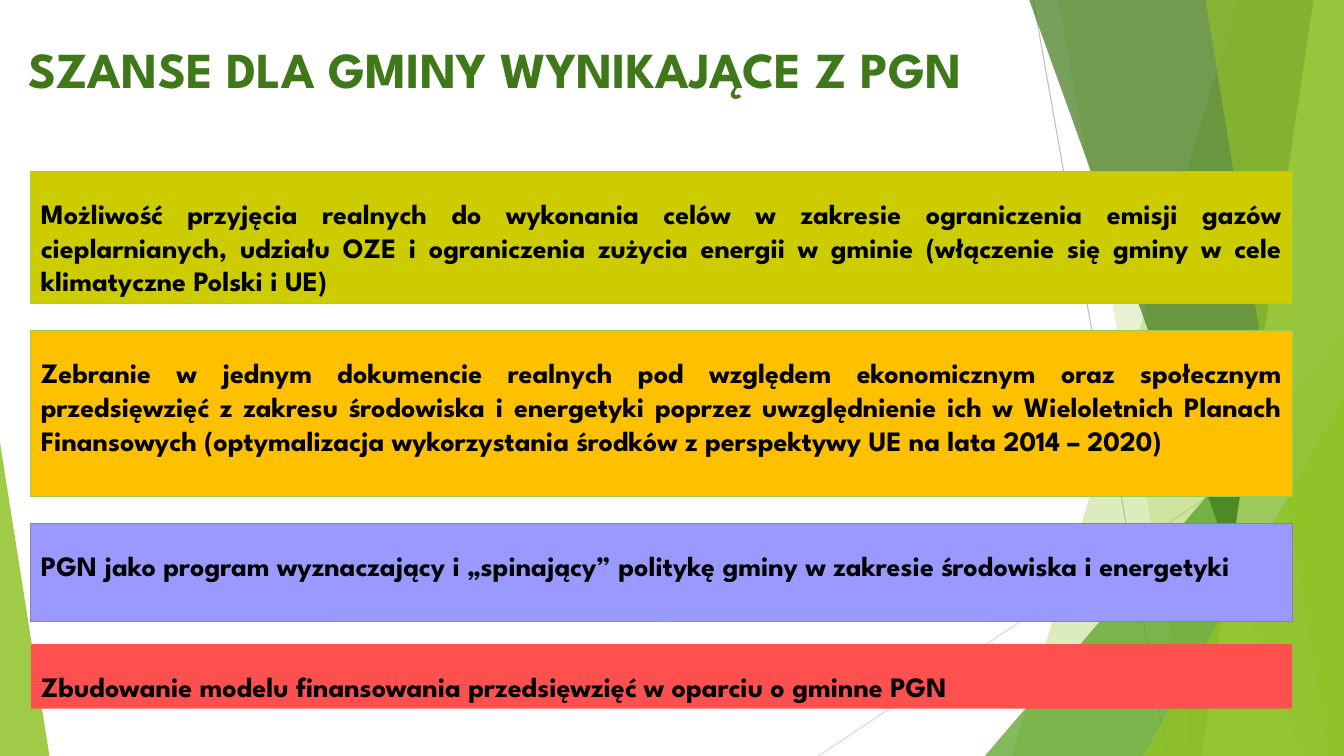
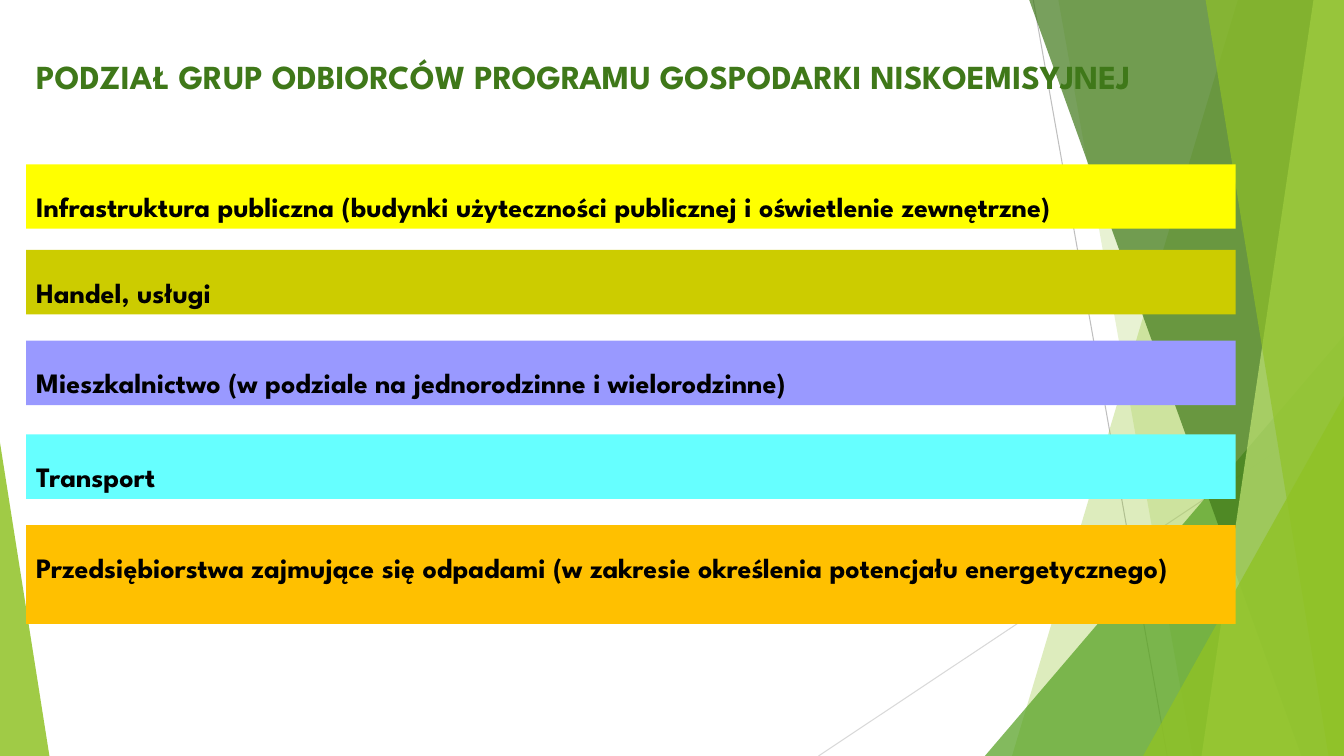
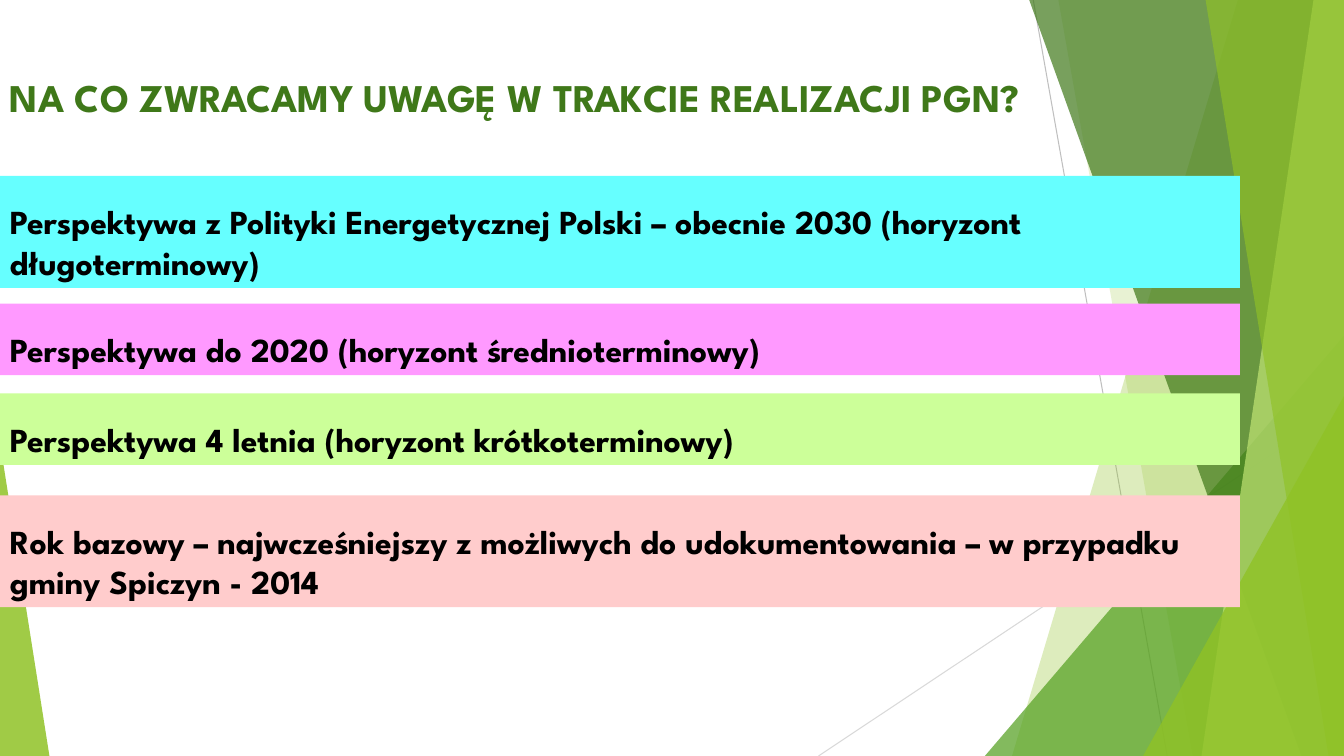
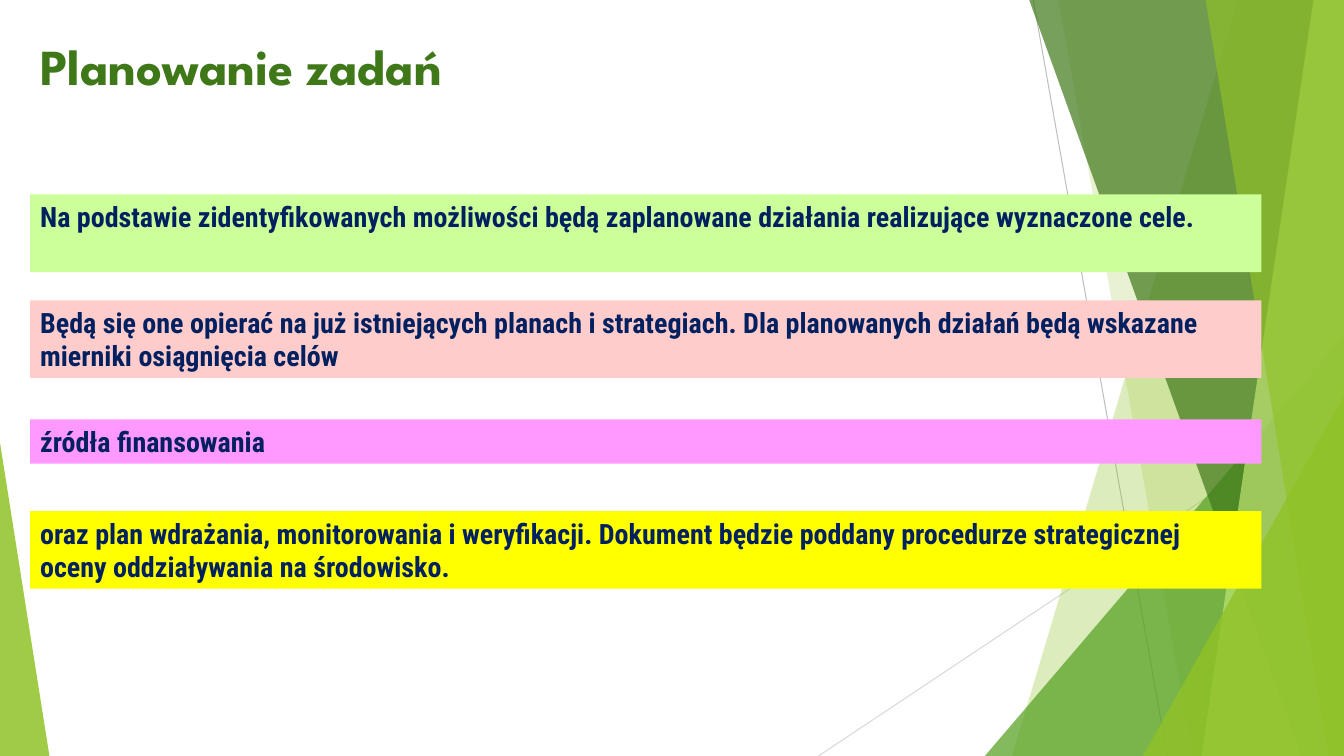
from dataclasses import dataclass

from lxml import etree
from pptx import Presentation
from pptx import util as u
from pptx.dml.color import RGBColor
from pptx.enum import shapes, text
from pptx.oxml.ns import qn

# Slide grid: 100 columns by 100 rows
W, H = u.Inches(13.33), u.Inches(7.5)
TITLE_FONT, PLAIN_FONT = "League Spartan", "Roboto Condensed"
SIDE_PAD, TOP_PAD, LOW_TOP_PAD = u.Inches(0.1), u.Inches(0.05), u.Inches(0.25)

BLACK = RGBColor(0x00, 0x00, 0x00)
NAVY = RGBColor(0x00, 0x20, 0x60)
DARK_GREEN = RGBColor(0x3F, 0x78, 0x19)
MID_GREEN = RGBColor(0x54, 0xA0, 0x21)
GREEN = RGBColor(0x90, 0xC2, 0x26)
PALE_GREEN = RGBColor(0xC0, 0xE4, 0x74)
EDGE_GREEN = RGBColor(0x92, 0xD0, 0x50)
EDGE_VIOLET = RGBColor(0x8F, 0x80, 0xA0)
GREY = RGBColor(0xBF, 0xBF, 0xBF)
LIGHT_GREY = RGBColor(0xD9, 0xD9, 0xD9)
OLIVE = RGBColor(0xCC, 0xCC, 0x00)
AMBER = RGBColor(0xFF, 0xC0, 0x00)
VIOLET = RGBColor(0x99, 0x99, 0xFF)
RED = RGBColor(0xFF, 0x50, 0x50)
YELLOW = RGBColor(0xFF, 0xFF, 0x00)
CYAN = RGBColor(0x66, 0xFF, 0xFF)
PINK = RGBColor(0xFF, 0x99, 0xFF)
LIME = RGBColor(0xCC, 0xFF, 0x99)
ROSE = RGBColor(0xFF, 0xCC, 0xCC)

# Background pieces from back to front
RAYS = [(76.88, 0, 86.85, 100, GREY), (100, 53.73, 60.9, 100, LIGHT_GREY)]
FACETS = [  # slant: top and bottom column; triangle: box and apex
    ("slant", (92.1, 75.3), GREEN, 30),
    ("slant", (78.75, 88.73), GREEN, 20),
    ("triangle", (73.28, 44.4, 26.72, 55.6, 1), MID_GREEN, 72),
    ("slant", (76.58, 96.83), DARK_GREEN, 70),
    ("slant", (97.73, 89.4), PALE_GREEN, 70),
    ("slant", (89.7, 98.85), GREEN, 65),
    ("triangle", (85.05, 52.4, 14.95, 47.6, 1), GREEN, 80),
    ("triangle", (0, 58.53, 3.68, 41.47, 0), GREEN, 85),
]


@dataclass
class Band:
    """A coloured bar; gap is the space in rows above it."""
    gap: float
    height: float
    fill: RGBColor
    words: str
    edge: RGBColor = None
    align: int = text.PP_ALIGN.LEFT


def col(n):
    return u.Emu(round(W * n / 100))


def row(n):
    return u.Emu(round(H * n / 100))


def paint(sp, fill, edge=None, alpha=100):
    sp.shadow.inherit = False
    sp.fill.solid()
    sp.fill.fore_color.rgb = fill
    if alpha < 100:
        clr = sp.element.find(".//" + qn("a:srgbClr"))
        etree.SubElement(clr, qn("a:alpha")).set("val", str(alpha * 1000))
    if edge is None:
        sp.line.fill.background()
    else:
        sp.line.color.rgb = edge
        sp.line.width = u.Pt(0.75)


def write(sp, words, size, font=TITLE_FONT, color=BLACK,
          align=text.PP_ALIGN.LEFT, top_pad=TOP_PAD):
    tf = sp.text_frame
    tf.word_wrap = True
    tf.vertical_anchor = text.MSO_ANCHOR.TOP
    tf.margin_left = tf.margin_right = SIDE_PAD
    tf.margin_top, tf.margin_bottom = top_pad, TOP_PAD
    p = tf.paragraphs[0]
    p.alignment = align
    r = p.add_run()
    r.text = words
    r.font.name, r.font.size, r.font.bold = font, u.Pt(size), True
    r.font.color.rgb = color


def add_ray(group, x1, y1, x2, y2, color):
    line = group.shapes.add_connector(
        shapes.MSO_CONNECTOR.STRAIGHT, col(x1), row(y1), col(x2), row(y2))
    line.line.color.rgb = color
    line.line.width = u.Pt(0.75)
    etree.SubElement(line.element.spPr, qn("a:effectLst"))


def add_slant(group, top, bottom):
    """Fill the slide from a slanted left edge to its right side."""
    builder = group.shapes.build_freeform(col(top), 0)
    builder.add_line_segments([(W, 0), (W, H), (col(bottom), H)], close=True)
    return builder.convert_to_shape()


def add_triangle(group, x, y, w, h, apex):
    sp = group.shapes.add_shape(
        shapes.MSO_SHAPE.ISOSCELES_TRIANGLE, col(x), row(y), col(w), row(h))
    sp.adjustments[0] = apex
    return sp


def decorate_layout(layout, s):
    """Draw the background on s, then hand it to the layout all slides use."""
    for ph in list(layout.placeholders):
        ph.element.getparent().remove(ph.element)
    group = s.shapes.add_group_shape()
    for ray in RAYS:
        add_ray(group, *ray)
    draw = {"slant": add_slant, "triangle": add_triangle}
    for kind, place, color, alpha in FACETS:
        paint(draw[kind](group, *place), color, alpha=alpha)
    layout.shapes.element.append(group.element)


def add_title(s, box, words, size):
    x, y, w, h = box
    sp = s.shapes.add_textbox(col(x), row(y), col(w), row(h))
    write(sp, words, size, color=DARK_GREEN)


def add_bands(s, box, bands, **style):
    """Stack bands downward from the top of box (left, top, width)."""
    x, y, w = box
    for band in bands:
        y += band.gap
        sp = s.shapes.add_shape(
            shapes.MSO_SHAPE.RECTANGLE, col(x), row(y), col(w), row(band.height))
        paint(sp, band.fill, band.edge)
        write(sp, band.words, align=band.align, **style)
        y += band.height


JUSTIFY = text.PP_ALIGN.JUSTIFY
LOW = dict(size=20, top_pad=LOW_TOP_PAD)
SLIDES = [
    dict(title=((1.35, 4.4, 79.88, 10.67), "SZANSE DLA GMINY WYNIKAJĄCE Z PGN", 36),
         box=(2.3, 22.67, 93.85), style=LOW, bands=[
        Band(0, 17.47, OLIVE, "Możliwość przyjęcia realnych do wykonania celów w zakresie "
             "ograniczenia emisji gazów cieplarnianych, udziału OZE i ograniczenia zużycia "
             "energii w gminie (włączenie się gminy w cele klimatyczne Polski i UE)",
             EDGE_GREEN, JUSTIFY),
        Band(3.6, 22, AMBER, "Zebranie w jednym dokumencie realnych pod względem "
             "ekonomicznym oraz społecznym przedsięwzięć z zakresu środowiska i energetyki "
             "poprzez uwzględnienie ich w Wieloletnich Planach Finansowych (optymalizacja "
             "wykorzystania środków z perspektywy UE na lata 2014 – 2020)",
             EDGE_GREEN, JUSTIFY),
        Band(3.47, 13.07, VIOLET, "PGN jako program wyznaczający i „spinający” politykę "
             "gminy w zakresie środowiska i energetyki", EDGE_VIOLET, JUSTIFY),
        Band(2.93, 8.53, RED, "Zbudowanie modelu finansowania przedsięwzięć w oparciu "
             "o gminne PGN"),
    ]),
    dict(title=((1.95, 6.8, 90.1, 10.8),
                "PODZIAŁ GRUP ODBIORCÓW PROGRAMU GOSPODARKI NISKOEMISYJNEJ", 24),
         box=(1.95, 21.73, 90), style=LOW, bands=[
        Band(0, 8.53, YELLOW, "Infrastruktura publiczna (budynki użyteczności publicznej "
             "i oświetlenie zewnętrzne)"),
        Band(2.8, 8.53, OLIVE, "Handel, usługi"),
        Band(3.47, 8.53, VIOLET, "Mieszkalnictwo (w podziale na jednorodzinne "
             "i wielorodzinne)"),
        Band(3.87, 8.53, CYAN, "Transport"),
        Band(3.47, 13.07, AMBER, "Przedsiębiorstwa zajmujące się odpadami (w zakresie "
             "określenia potencjału energetycznego)"),
    ]),
    dict(title=((0, 9.07, 82.05, 9.87), "NA CO ZWRACAMY UWAGĘ W TRAKCIE REALIZACJI PGN?", 28),
         box=(0, 23.27, 92.25), style=dict(LOW, size=24), bands=[
        Band(0, 14.8, CYAN, "Perspektywa z Polityki Energetycznej Polski – obecnie 2030 "
             "(horyzont długoterminowy)"),
        Band(2.1, 9.47, PINK, "Perspektywa do 2020 (horyzont średnioterminowy)"),
        Band(2.4, 9.47, LIME, "Perspektywa 4 letnia (horyzont krótkoterminowy)"),
        Band(4, 14.8, ROSE, "Rok bazowy – najwcześniejszy z możliwych do udokumentowania "
             "– w przypadku gminy Spiczyn - 2014"),
    ]),
    dict(title=((2.25, 4, 70.5, 10.4), "Planowanie zadań", 36),
         box=(2.25, 25.73, 91.6), style=dict(size=20, font=PLAIN_FONT, color=NAVY), bands=[
        Band(0, 10.27, LIME, "Na podstawie zidentyfikowanych możliwości będą zaplanowane "
             "działania realizujące wyznaczone cele."),
        Band(3.73, 10.27, ROSE, "Będą się one opierać na już istniejących planach "
             "i strategiach. Dla planowanych działań będą wskazane mierniki osiągnięcia celów"),
        Band(5.47, 5.87, PINK, "źródła finansowania"),
        Band(6.27, 10.27, YELLOW, "oraz plan wdrażania, monitorowania i weryfikacji. "
             "Dokument będzie poddany procedurze strategicznej oceny oddziaływania "
             "na środowisko."),
    ]),
]


def main():
    prs = Presentation()
    prs.slide_width, prs.slide_height = W, H
    layout = prs.slide_layouts[6]
    for i, content in enumerate(SLIDES):
        s = prs.slides.add_slide(layout)
        if i == 0:
            decorate_layout(layout, s)
        add_title(s, *content["title"])
        add_bands(s, content["box"], content["bands"], **content["style"])
    prs.save("out.pptx")


if __name__ == "__main__":
    main()
